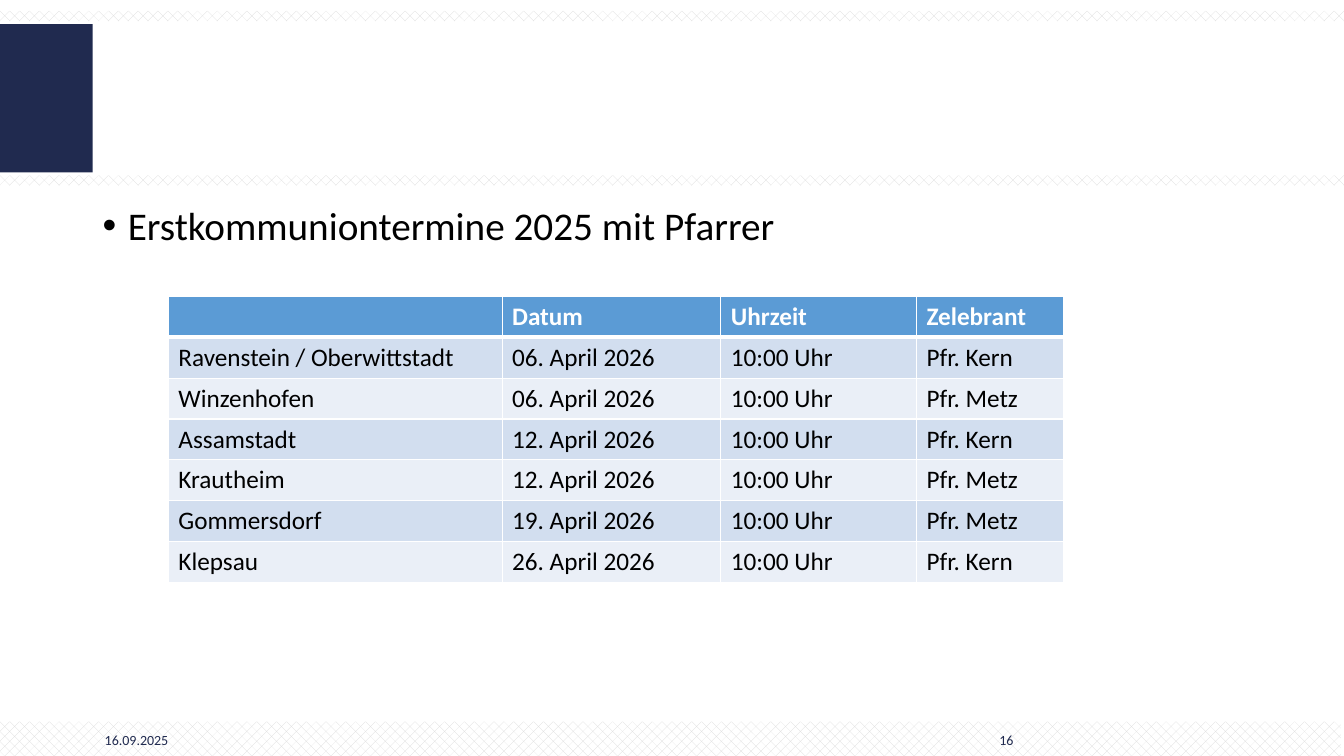
from dataclasses import dataclass

from lxml import etree
from pptx import Presentation
from pptx import util as u
from pptx.dml.color import RGBColor
from pptx.enum import dml, shapes, text
from pptx.oxml.ns import qn


@dataclass(frozen=True)
class Theme:
    font: str = "Calibri"
    navy: str = "202A4F"
    black: str = "000000"
    white: str = "FFFFFF"
    pattern: str = "D9D9D9"
    header: str = "5B9BD5"
    odd_row: str = "D2DEEF"
    even_row: str = "EAEFF7"
    heading_size: int = 28
    table_size: int = 18
    footer_size: int = 10


@dataclass(frozen=True)
class Box:
    left: float
    top: float
    width: float
    height: float

    def lengths(self) -> tuple:
        return tuple(u.Inches(v) for v in (self.left, self.top, self.width, self.height))


@dataclass(frozen=True)
class Communion:
    parish: str
    date: str
    celebrant: str
    time: str = "10:00 Uhr"

    def cells(self) -> tuple:
        return self.parish, self.date, self.time, self.celebrant


THEME = Theme()
PATTERN_BANDS = (
    Box(0, 7.16, 13.3, 0.36),
    Box(0, 1.74, 13.33, 0.1),
    Box(0, 0.11, 13.33, 0.1),
)
NAVY_BLOCK = Box(0, 0.24, 0.92, 1.47)
HEADING_BOX = Box(0.92, 2, 11.5, 1.1)
DATE_BOX = Box(0.94, 7.19, 0.98, 0.31)
NUMBER_BOX = Box(9.58, 7.19, 0.57, 0.31)
TABLE_BOX = Box(1.67, 2.94, 8.88, 2.84)
COLUMN_WIDTHS = (3.31, 2.17, 1.94, 1.46)
HEADERS = ("", "Datum", "Uhrzeit", "Zelebrant")
COMMUNIONS = (
    Communion("Ravenstein / Oberwittstadt", "06. April 2026", "Pfr. Kern"),
    Communion("Winzenhofen", "06. April 2026", "Pfr. Metz"),
    Communion("Assamstadt", "12. April 2026", "Pfr. Kern"),
    Communion("Krautheim", "12. April 2026", "Pfr. Metz"),
    Communion("Gommersdorf", "19. April 2026", "Pfr. Metz"),
    Communion("Klepsau", "26. April 2026", "Pfr. Kern"),
)


def write_text(frame, words: str, *, size: int, color: str, bold: bool = False,
               align=text.PP_ALIGN.LEFT, anchor=text.MSO_ANCHOR.TOP,
               bullet: str = "", indent: float = 0, line_spacing: float = 1) -> None:
    frame.word_wrap = True
    frame.vertical_anchor = anchor
    paragraph = frame.paragraphs[0]
    paragraph.alignment = align
    paragraph.line_spacing = line_spacing
    if bullet:
        properties = paragraph._p.get_or_add_pPr()
        properties.set("marL", str(u.Inches(indent)))
        properties.set("indent", str(-u.Inches(indent)))
        etree.SubElement(properties, qn("a:buFont"), typeface="Arial")
        etree.SubElement(properties, qn("a:buChar"), char=bullet)
    paragraph.font.size = u.Pt(size)
    if words:
        run = paragraph.add_run()
        run.text = words
        run.font.name = THEME.font
        run.font.size = u.Pt(size)
        run.font.bold = bold
        run.font.color.rgb = RGBColor.from_string(color)


def add_rectangle(slide, box: Box):
    shape = slide.shapes.add_shape(shapes.MSO_SHAPE.RECTANGLE, *box.lengths())
    shape.shadow.inherit = False
    shape.line.fill.background()
    return shape


def add_pattern_band(slide, box: Box) -> None:
    fill = add_rectangle(slide, box).fill
    fill.patterned()
    fill.pattern = dml.MSO_PATTERN.PERCENT_30
    fill.fore_color.rgb = RGBColor.from_string(THEME.pattern)
    fill.back_color.rgb = RGBColor.from_string(THEME.white)


def add_solid_block(slide, box: Box, color: str) -> None:
    fill = add_rectangle(slide, box).fill
    fill.solid()
    fill.fore_color.rgb = RGBColor.from_string(color)


def add_text(slide, box: Box, words: str, **style) -> None:
    write_text(slide.shapes.add_textbox(*box.lengths()).text_frame, words, **style)


def set_borders(cell, *, top: float, bottom: float) -> None:
    properties = cell._tc.get_or_add_tcPr()
    for side, width in (("L", 1), ("R", 1), ("T", top), ("B", bottom)):
        line = etree.SubElement(properties, qn(f"a:ln{side}"), w=str(u.Pt(width)))
        fill = etree.SubElement(line, qn("a:solidFill"))
        etree.SubElement(fill, qn("a:srgbClr"), val=THEME.white)


def add_schedule(slide) -> None:
    rows = (HEADERS, *(communion.cells() for communion in COMMUNIONS))
    table = slide.shapes.add_table(len(rows), len(HEADERS), *TABLE_BOX.lengths()).table
    table.horz_banding = False
    for column, width in zip(table.columns, COLUMN_WIDTHS):
        column.width = u.Inches(width)
    for row_index, row in enumerate(rows):
        is_header = row_index == 0
        row_color = THEME.odd_row if row_index % 2 else THEME.even_row
        for column_index, words in enumerate(row):
            cell = table.cell(row_index, column_index)
            set_borders(cell, top=3 if row_index == 1 else 1, bottom=3 if is_header else 1)
            cell.fill.solid()
            cell.fill.fore_color.rgb = RGBColor.from_string(
                THEME.header if is_header else row_color)
            write_text(cell.text_frame, words, size=THEME.table_size, bold=is_header,
                       color=THEME.white if is_header else THEME.black)


def main() -> None:
    presentation = Presentation()
    presentation.slide_width = u.Inches(13.33)
    presentation.slide_height = u.Inches(7.5)
    slide = presentation.slides.add_slide(presentation.slide_layouts[6])
    for band in PATTERN_BANDS:
        add_pattern_band(slide, band)
    add_solid_block(slide, NAVY_BLOCK, THEME.navy)
    add_text(slide, HEADING_BOX, "Erstkommuniontermine 2025 mit Pfarrer",
             size=THEME.heading_size, color=THEME.black, bullet="•", indent=0.25,
             line_spacing=0.9)
    footer = dict(size=THEME.footer_size, color=THEME.navy, anchor=text.MSO_ANCHOR.MIDDLE)
    add_text(slide, DATE_BOX, "16.09.2025", **footer)
    add_text(slide, NUMBER_BOX, "16", align=text.PP_ALIGN.RIGHT, **footer)
    add_schedule(slide)
    presentation.save("out.pptx")


if __name__ == "__main__":
    main()
